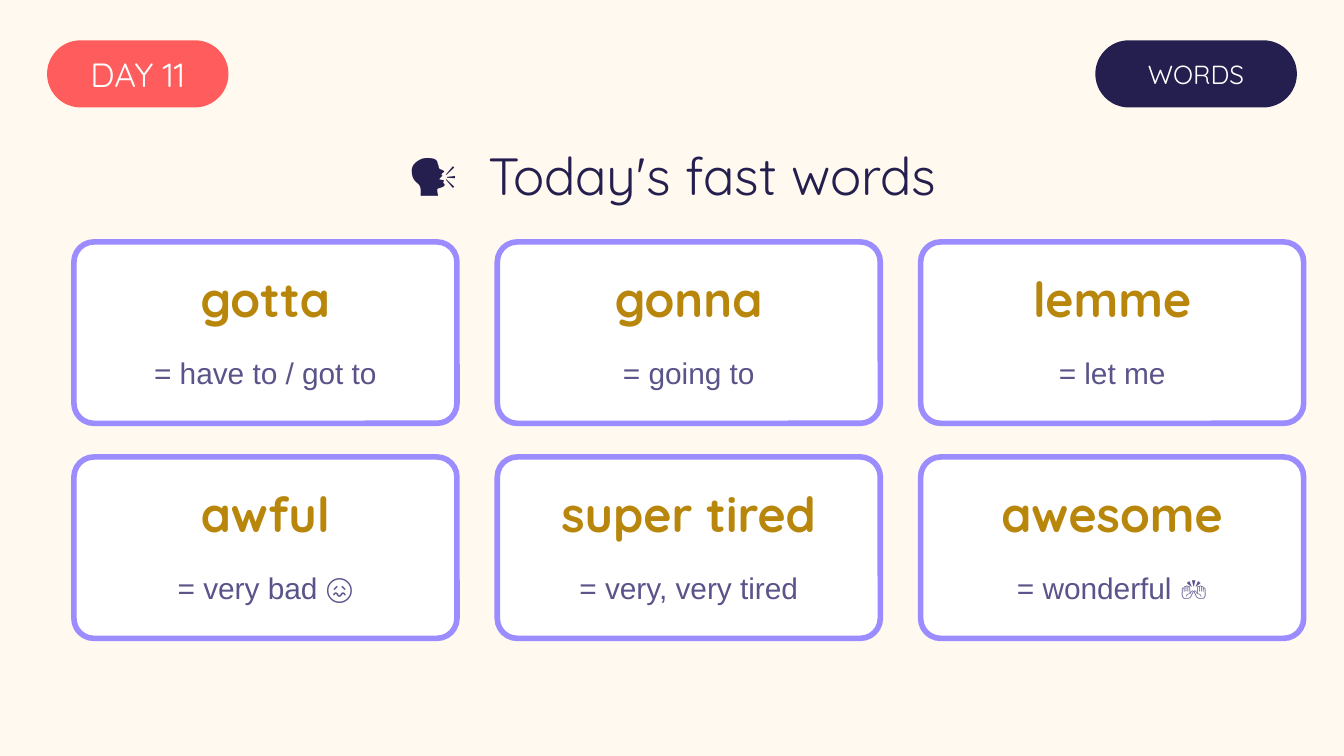
import pptx
import pptx.dml.color
import pptx.enum.shapes
import pptx.enum.text
import pptx.util

Pt = pptx.util.Pt

COLORS = {
    "cream": "FFF9EF", "coral": "FF5D5D", "navy": "241F4E", "white": "FFFFFF",
    "lilac": "9B8CFF", "gold": "B8860B", "violet": "5A548A",
}
TITLE = "🗣️  Today's fast words"
# text, left, width, fill, font size
PILLS = [
    ("DAY 11", 25.2, 97.2, "coral", 18),
    ("WORDS", 586.8, 108, "navy", 14),
]
WORDS = [
    ("gotta", "= have to / got to"),
    ("gonna", "= going to"),
    ("lemme", "= let me"),
    ("awful", "= very bad 😖"),
    ("super tired", "= very, very tired"),
    ("awesome", "= wonderful 🙌"),
]

SLIDE_W, SLIDE_H = 720, 405
PILL_TOP, PILL_H = 21.6, 36
COLUMNS = 3
GRID_LEFT, GRID_TOP = 39.6, 129.6
CARD_W, CARD_H = 205.2, 97.2
GAP_X, GAP_Y = 21.6, 18


def rgb(name):
    return pptx.dml.color.RGBColor.from_string(COLORS[name])


def write(shape, text, size, color, font="Quicksand", bold=False):
    """Put one centred line of text in a shape or text box."""
    tf = shape.text_frame
    tf.word_wrap = True
    tf.vertical_anchor = pptx.enum.text.MSO_ANCHOR.MIDDLE
    p = tf.paragraphs[0]
    p.alignment = pptx.enum.text.PP_ALIGN.CENTER
    r = p.add_run()
    r.text = text
    r.font.name = font
    r.font.size = Pt(size)
    r.font.bold = bold
    r.font.color.rgb = rgb(color)


def add_text(s, box, *args, **style):
    write(s.shapes.add_textbox(*map(Pt, box)), *args, **style)


def add_round_box(s, box, radius, fill, line=None):
    """Add a rounded rectangle; radius is a share of its shorter side."""
    sp = s.shapes.add_shape(
        pptx.enum.shapes.MSO_SHAPE.ROUNDED_RECTANGLE, *map(Pt, box))
    sp.shadow.inherit = False
    sp.adjustments[0] = radius
    sp.fill.solid()
    sp.fill.fore_color.rgb = rgb(fill)
    if line:
        sp.line.color.rgb = rgb(line)
        sp.line.width = Pt(3)
    else:
        sp.line.fill.background()
    return sp


def add_pill(s, text, left, width, fill, size):
    sp = add_round_box(s, (left, PILL_TOP, width, PILL_H), 0.5, fill)
    tf = sp.text_frame
    tf.margin_left = tf.margin_right = tf.margin_top = tf.margin_bottom = 0
    write(sp, text, size, "white")


def add_card(s, left, top, word, meaning):
    add_round_box(s, (left, top, CARD_W, CARD_H), 0.11, "white", "lilac")
    add_text(s, (left, top + 8.64, CARD_W, 43.2), word, 26, "gold", bold=True)
    add_text(s, (left, top + 54, CARD_W, 32.4), meaning, 16, "violet", font="Arial")


def main():
    prs = pptx.Presentation()
    prs.slide_width, prs.slide_height = Pt(SLIDE_W), Pt(SLIDE_H)
    s = prs.slides.add_slide(prs.slide_layouts[6])
    s.background.fill.solid()
    s.background.fill.fore_color.rgb = rgb("cream")

    for pill in PILLS:
        add_pill(s, *pill)
    add_text(s, (0, 68.4, SLIDE_W, 50.4), TITLE, 28, "navy")
    for i, (word, meaning) in enumerate(WORDS):
        row, col = divmod(i, COLUMNS)
        add_card(s, GRID_LEFT + col * (CARD_W + GAP_X),
                 GRID_TOP + row * (CARD_H + GAP_Y), word, meaning)
    prs.save("out.pptx")


if __name__ == "__main__":
    main()
